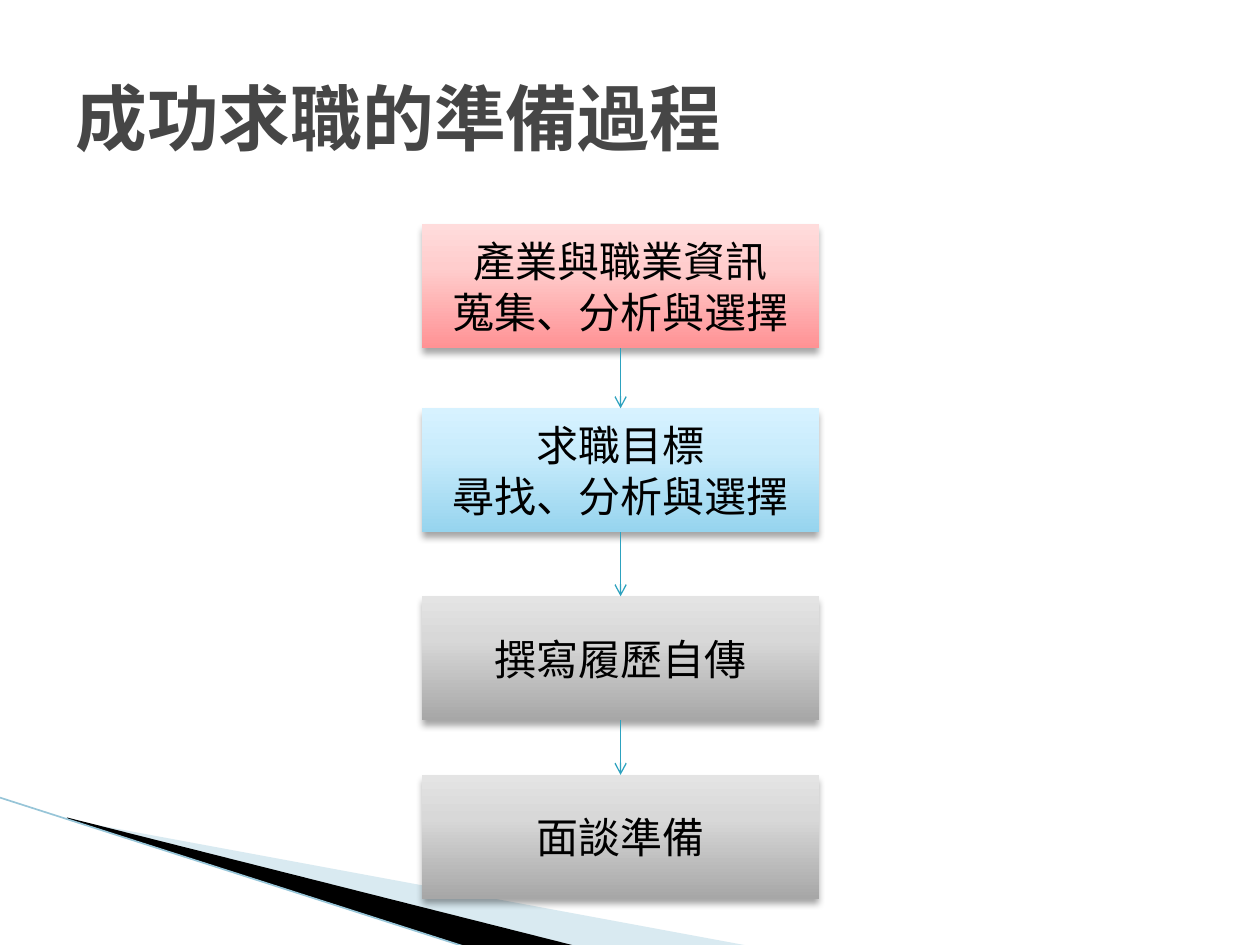
from itertools import pairwise

from lxml.etree import SubElement
from pptx import Presentation
from pptx.dml.color import RGBColor
from pptx.enum.shapes import MSO_CONNECTOR as Connector, MSO_SHAPE as Shape
from pptx.enum.text import MSO_ANCHOR as Anchor, PP_ALIGN as Align
from pptx.oxml import parse_xml
from pptx.oxml.ns import nsdecls, qn
from pptx.util import Cm, Pt

# Content
TITLE = "成功求職的準備過程"
RED = ("FF9294", "FFCDCD", "FFDCDC")
BLUE = ("96D4EE", "C9ECFC", "D7F2FF")
GREY = ("A7A7A7", "D8D8D8", "E4E4E4")
STEPS = [  # lines, gradient from bottom to top, top in cm
    (["產業與職業資訊", "蒐集、分析與選擇"], RED, 4.52),
    (["求職目標", "尋找、分析與選擇"], BLUE, 8.23),
    (["撰寫履歷自傳"], GREY, 12.02),
    (["面談準備"], GREY, 15.62),
]
WEDGES = [  # points in cm, colour, opacity in percent
    ([(1.4, 16.53), (15.11, 19.07), (11.58, 19.07), (1.4, 16.51)], "A0CBDC", 40),
    ([(1.35, 16.48), (11.61, 19.07), (9.45, 19.1), (1.37, 16.51)], "000000", 100),
]

# Layout and style
FONT = "Noto Sans CJK SC"
STEP_LEFT, STEP_WIDTH, STEP_HEIGHT = 8.51, 8, 2.5
STOPS = (0, 65, 100)


def rgb(color):
    return RGBColor.from_string(color)


def write(frame, lines, size, color, bold=False, align=Align.LEFT, spacing=None):
    frame.vertical_anchor = Anchor.MIDDLE
    frame.text = "\n".join(lines)
    for line in frame.paragraphs:
        line.alignment = align
        line.line_spacing = spacing
        font = line.font
        font.name, font.size, font.bold = FONT, Pt(size), bold
        font.color.rgb = rgb(color)
        SubElement(font._element, qn("a:ea"), typeface=FONT)


def gradient(shape, colors):
    stops = "".join(
        f'<a:gs pos="{pos * 1000}"><a:srgbClr val="{color}"/></a:gs>'
        for pos, color in zip(STOPS, colors))
    shape._element.spPr.find(qn("a:prstGeom")).addnext(parse_xml(
        f'<a:gradFill {nsdecls("a")}><a:gsLst>{stops}</a:gsLst>'
        '<a:lin ang="16200000" scaled="0"/></a:gradFill>'))


def drop_shadow(shape):
    shape._element.spPr.append(parse_xml(
        f'<a:effectLst {nsdecls("a")}><a:outerShdw blurRad="{Pt(4)}" dist="{Pt(3)}" '
        'dir="5400000" rotWithShape="0"><a:srgbClr val="000000">'
        '<a:alpha val="35000"/></a:srgbClr></a:outerShdw></a:effectLst>'))


def add_line(shapes, start, end, color, width):
    line = shapes.add_connector(Connector.STRAIGHT, *map(Cm, start + end))
    line.line.color.rgb = rgb(color)
    line.line.width = Pt(width)
    SubElement(line._element.spPr, qn("a:effectLst"))
    return line


def add_wedge(shapes, points, color, opacity):
    first, *rest = [(Cm(x), Cm(y)) for x, y in points]
    builder = shapes.build_freeform(*first)
    builder.add_line_segments(rest, close=True)
    wedge = builder.convert_to_shape()
    wedge.shadow.inherit = False
    wedge.fill.solid()
    wedge.fill.fore_color.rgb = rgb(color)
    wedge.line.fill.background()
    if opacity < 100:
        fill_color = wedge._element.spPr.find(".//" + qn("a:srgbClr"))
        SubElement(fill_color, qn("a:alpha"), val=str(opacity * 1000))


def add_step(shapes, lines, colors, top):
    step = shapes.add_shape(Shape.RECTANGLE, Cm(STEP_LEFT), Cm(top),
                            Cm(STEP_WIDTH), Cm(STEP_HEIGHT))
    gradient(step, colors)
    step.line.fill.background()
    drop_shadow(step)
    step.text_frame.word_wrap = False
    write(step.text_frame, lines, 24, "000000", align=Align.CENTER, spacing=Pt(29))
    return step


def main():
    prs = Presentation()
    prs.slide_width, prs.slide_height = Cm(25.4), Cm(19.05)
    shapes = prs.slides.add_slide(prs.slide_layouts[6]).shapes

    # Corner decoration
    for wedge in WEDGES:
        add_wedge(shapes, *wedge)
    add_line(shapes, (0, 16.08), (9.42, 19.1), "97C5D8", 0.95)

    # Title
    title = shapes.add_textbox(Cm(1.27), Cm(0.76), Cm(22.86), Cm(3.18)).text_frame
    title.word_wrap = True
    write(title, [TITLE], 41, "464646", bold=True)

    # Steps, each joined to the next by an arrow
    steps = [add_step(shapes, *step) for step in STEPS]
    for upper, lower in pairwise(steps):
        arrow = add_line(shapes, (0, 0), (0, 0), "2DA2BF", 0.75)
        arrow.begin_connect(upper, 2)
        arrow.end_connect(lower, 0)
        SubElement(arrow.line._get_or_add_ln(), qn("a:tailEnd"), type="arrow")

    prs.save("out.pptx")


if __name__ == "__main__":
    main()
